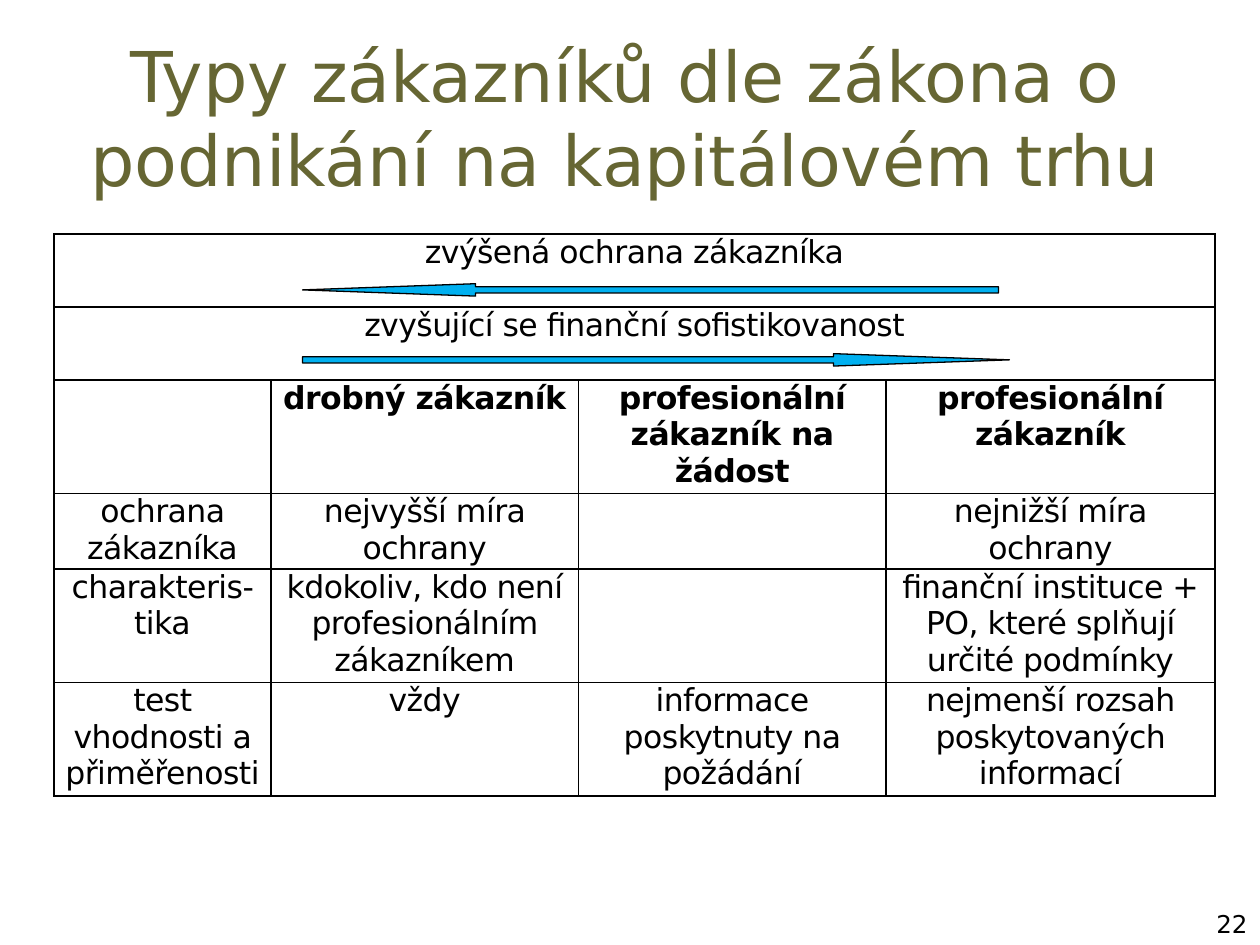
from dataclasses import dataclass

import lxml.etree
import pptx
import pptx.dml.color
import pptx.enum.shapes
import pptx.enum.text
import pptx.oxml.ns
import pptx.util
from pptx.util import Cm

FONT = "DejaVu Sans"
BLACK, OLIVE, SKY = "000000", "666633", "00B0F0"
ALIGN = pptx.enum.text.PP_ALIGN
ANCHOR = pptx.enum.text.MSO_ANCHOR
SHAPE = pptx.enum.shapes.MSO_SHAPE


@dataclass
class Box:
    left: float
    top: float
    width: float
    height: float

    def lengths(self) -> tuple:
        return Cm(self.left), Cm(self.top), Cm(self.width), Cm(self.height)


@dataclass
class Arrow:
    direction: int
    box: Box
    head: float


def color(value: str) -> pptx.dml.color.RGBColor:
    return pptx.dml.color.RGBColor.from_string(value)


def write(frame, text: str, size: float, ink: str, align, bold=False, spacing=0) -> None:
    frame.text = text
    paragraph = frame.paragraphs[0]
    paragraph.alignment = align
    for run in paragraph.runs:
        run.font.name = FONT
        run.font.size = pptx.util.Pt(size)
        run.font.bold = bold
        run.font.color.rgb = color(ink)
        if spacing:
            run._r.get_or_add_rPr().set("spc", str(round(spacing * 100)))


def add_text(slide, box: Box, text: str, size: float, ink: str, align, anchor) -> None:
    frame = slide.shapes.add_textbox(*box.lengths()).text_frame
    frame.word_wrap = True
    frame.vertical_anchor = anchor
    write(frame, text, size, ink, align)


def add_borders(cell) -> None:
    properties = cell._tc.get_or_add_tcPr()
    for position, side in enumerate(("lnL", "lnR", "lnT", "lnB")):
        line = lxml.etree.Element(pptx.oxml.ns.qn(f"a:{side}"), w=str(pptx.util.Pt(1)))
        fill = lxml.etree.SubElement(line, pptx.oxml.ns.qn("a:solidFill"))
        lxml.etree.SubElement(fill, pptx.oxml.ns.qn("a:srgbClr"), val=BLACK)
        properties.insert(position, line)


def add_customer_table(slide, box: Box, widths: list, heights: list, rows: list) -> None:
    table = slide.shapes.add_table(len(rows), len(widths), *box.lengths()).table
    table.first_row = table.horz_banding = False
    for column, width in zip(table.columns, widths):
        column.width = Cm(width)
    for row_index, (row, height) in enumerate(zip(rows, heights)):
        table.rows[row_index].height = Cm(height)
        if len(row) == 1:
            table.cell(row_index, 0).merge(table.cell(row_index, len(widths) - 1))
        for column_index in range(len(widths)):
            cell = table.cell(row_index, column_index)
            cell.margin_left = cell.margin_right = Cm(0.18)
            cell.margin_top = cell.margin_bottom = 0
            cell.fill.background()
            add_borders(cell)
            if column_index < len(row) and row[column_index]:
                write(cell.text_frame, row[column_index], 18, BLACK, ALIGN.CENTER,
                      bold=row_index == HEADER_ROW, spacing=-0.3)


def add_arrow(slide, arrow: Arrow) -> None:
    shape = slide.shapes.add_shape(arrow.direction, *arrow.box.lengths())
    shape.adjustments[0] = 0.5
    shape.adjustments[1] = arrow.head
    shape.shadow.inherit = False
    shape.fill.solid()
    shape.fill.fore_color.rgb = color(SKY)
    shape.line.color.rgb = color(BLACK)
    shape.line.width = pptx.util.Pt(0.75)


HEADER_ROW = 2
COLUMN_WIDTHS = [4.37, 6.2, 6.2, 6.63]
ONE_LINE, THREE_LINES = 1.47, 2.21
ROW_HEIGHTS = [ONE_LINE, ONE_LINE, THREE_LINES, ONE_LINE, THREE_LINES, THREE_LINES]
CUSTOMER_ROWS = [
    ["zvýšená ochrana zákazníka"],
    ["zvyšující se finanční sofistikovanost"],
    ["", "drobný zákazník", "profesionální zákazník na žádost", "profesionální zákazník"],
    ["ochrana zákazníka", "nejvyšší míra ochrany", "", "nejnižší míra ochrany"],
    ["charakteris-tika", "kdokoliv, kdo není profesionálním zákazníkem", "",
     "finanční instituce + PO, které splňují určité podmínky"],
    ["test vhodnosti a přiměřenosti", "vždy", "informace poskytnuty na požádání",
     "nejmenší rozsah poskytovaných informací"],
]
ARROWS = [
    Arrow(SHAPE.LEFT_ARROW, Box(6.1, 5.72, 14.03, 0.25), 13.95),
    Arrow(SHAPE.RIGHT_ARROW, Box(6.1, 7.13, 14.25, 0.25), 14.18),
]


def main() -> None:
    presentation = pptx.Presentation()
    presentation.slide_width, presentation.slide_height = Cm(25.4), Cm(19.05)
    slide = presentation.slides.add_slide(presentation.slide_layouts[6])

    # Title and page number
    add_text(slide, Box(1.07, 0.76, 23.06, 3.18),
             "Typy zákazníků dle zákona o podnikání na kapitálovém trhu",
             40, OLIVE, ALIGN.CENTER, ANCHOR.MIDDLE)
    add_text(slide, Box(19.48, 18.21, 5.92, 0.84), "22", 14, BLACK, ALIGN.RIGHT, ANCHOR.TOP)

    # Customer types
    table_box = Box(1.09, 4.72, sum(COLUMN_WIDTHS), sum(ROW_HEIGHTS))
    add_customer_table(slide, table_box, COLUMN_WIDTHS, ROW_HEIGHTS, CUSTOMER_ROWS)

    # Directions of protection and sophistication
    for arrow in ARROWS:
        add_arrow(slide, arrow)

    presentation.save("out.pptx")


if __name__ == "__main__":
    main()
